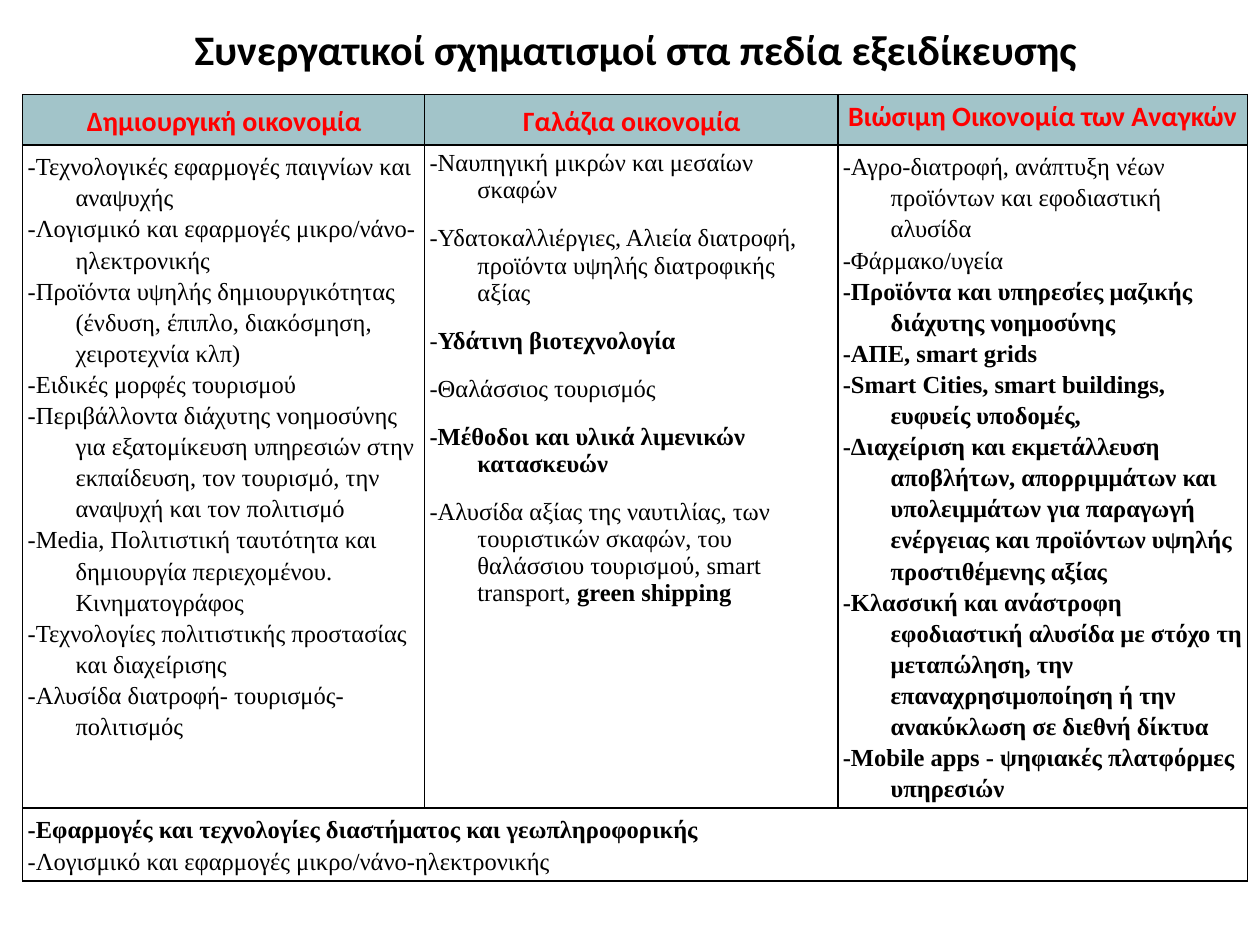
import pptx
import pptx.util
import pptx.dml.color
import pptx.enum.text
import pptx.oxml
import pptx.oxml.ns

Inches, Pt = pptx.util.Inches, pptx.util.Pt
CENTER = pptx.enum.text.PP_ALIGN.CENTER
LEFT = pptx.enum.text.PP_ALIGN.LEFT
MIDDLE = pptx.enum.text.MSO_ANCHOR.MIDDLE

# Content: text between ** marks is bold
TITLE = "**Συνεργατικοί σχηματισμοί στα πεδία εξειδίκευσης**"
HEADINGS = [
    "**Δημιουργική οικονομία**",
    "**Γαλάζια οικονομία**",
    "**Βιώσιμη Οικονομία των Αναγκών**",
]
FIELDS = [
    [
        "-Τεχνολογικές εφαρμογές παιγνίων και αναψυχής",
        "-Λογισμικό και εφαρμογές μικρο/νάνο-ηλεκτρονικής",
        "-Προϊόντα υψηλής δημιουργικότητας (ένδυση, έπιπλο, διακόσμηση, χειροτεχνία κλπ)",
        "-Ειδικές μορφές τουρισμού",
        "-Περιβάλλοντα διάχυτης νοημοσύνης για εξατομίκευση υπηρεσιών στην "
        "εκπαίδευση, τον τουρισμό, την αναψυχή και τον πολιτισμό",
        "-Μedia, Πολιτιστική ταυτότητα και δημιουργία περιεχομένου. Κινηματογράφος",
        "-Τεχνολογίες πολιτιστικής προστασίας και διαχείρισης",
        "-Αλυσίδα διατροφή- τουρισμός-πολιτισμός",
    ],
    [
        "-Ναυπηγική μικρών και μεσαίων σκαφών",
        "-Υδατοκαλλιέργιες, Αλιεία διατροφή, προϊόντα υψηλής διατροφικής αξίας",
        "-**Υδάτινη βιοτεχνολογία**",
        "-Θαλάσσιος τουρισμός",
        "**-Μέθοδοι και υλικά λιμενικών κατασκευών**",
        "-Αλυσίδα αξίας της ναυτιλίας, των τουριστικών σκαφών, του θαλάσσιου "
        "τουρισμού, smart transport, **green shipping**",
    ],
    [
        "-Αγρο-διατροφή, ανάπτυξη νέων προϊόντων και εφοδιαστική αλυσίδα",
        "-Φάρμακο/υγεία",
        "**-Προϊόντα και υπηρεσίες μαζικής διάχυτης νοημοσύνης**",
        "**-ΑΠΕ, smart grids**",
        "**-Smart Cities, smart buildings, ευφυείς υποδομές,**",
        "**-Διαχείριση και εκμετάλλευση αποβλήτων, απορριμμάτων και υπολειμμάτων "
        "για παραγωγή ενέργειας και προϊόντων υψηλής προστιθέμενης αξίας**",
        "**-Κλασσική και ανάστροφη εφοδιαστική αλυσίδα με στόχο τη μεταπώληση, την "
        "επαναχρησιμοποίηση ή την ανακύκλωση σε διεθνή δίκτυα**",
        "**-Mobile apps - ψηφιακές πλατφόρμες υπηρεσιών**",
    ],
]
SHARED = [
    "**-Eφαρμογές και τεχνολογίες διαστήματος και γεωπληροφορικής**",
    "-Λογισμικό και εφαρμογές μικρο/νάνο-ηλεκτρονικής",
]

# Formats
COLORS = {"black": "000000", "red": "FF0000", "teal": "A2C4C9", "white": "FFFFFF"}
COLUMNS = [3.19, 3.28, 3.25]
ROWS = [0.4, 5.26, 0.58]
TITLE_FONT = {"name": "Calibri", "size": Pt(24)}
HEADING_FONT = {"name": "Calibri", "size": Pt(16)}
BODY_FONT = {"name": "Times New Roman", "size": Pt(14)}
TITLE_LINES = {"alignment": CENTER, "line_spacing": 0.9}
HEADING_LINES = {"alignment": CENTER, "line_spacing": 1.15}
BODY_LINES = {"alignment": LEFT, "line_spacing": 1.15}
SPACED_LINES = {"alignment": LEFT, "space_before": Pt(6), "space_after": Pt(6)}


def color(name):
    return pptx.dml.color.RGBColor.from_string(COLORS[name])


def set_all(target, values):
    for name, value in values.items():
        setattr(target, name, value)


def write(frame, items, font, lines, ink="black", indent=None):
    for number, item in enumerate(items):
        paragraph = frame.add_paragraph() if number else frame.paragraphs[0]
        set_all(paragraph, lines)
        if indent:
            properties = paragraph._p.get_or_add_pPr()
            properties.set("marL", str(Inches(indent[0])))
            properties.set("indent", str(Inches(indent[1])))
        for part, text in enumerate(item.split("**")):
            if text:
                run = paragraph.add_run()
                run.text = text
                set_all(run.font, {**font, "bold": part % 2 == 1})
                run.font.color.rgb = color(ink)


def style_cell(cell, fill, vertical_margin=0.04):
    set_all(cell, {
        "margin_left": Inches(0.04), "margin_right": Inches(0.04),
        "margin_top": Inches(vertical_margin), "margin_bottom": Inches(vertical_margin),
    })
    cell.fill.solid()
    cell.fill.fore_color.rgb = color(fill)
    for position, side in enumerate("LRTB"):
        border = pptx.oxml.parse_xml(
            f'<a:ln{side} {pptx.oxml.ns.nsdecls("a")} w="{Pt(1)}"><a:solidFill>'
            f'<a:srgbClr val="{COLORS["black"]}"/></a:solidFill></a:ln{side}>')
        cell._tc.get_or_add_tcPr().insert(position, border)


def main():
    deck = pptx.Presentation()
    deck.slide_width, deck.slide_height = Inches(10), Inches(7.5)
    slide = deck.slides.add_slide(deck.slide_layouts[5])

    # Title
    title = slide.shapes.title
    set_all(title, {"left": Inches(0.19), "top": Inches(0.15),
                    "width": Inches(9.71), "height": Inches(0.53)})
    set_all(title.text_frame, {
        "word_wrap": True, "vertical_anchor": MIDDLE,
        "auto_size": pptx.enum.text.MSO_AUTO_SIZE.NONE,
        "margin_left": Inches(0.07), "margin_right": Inches(0.07),
        "margin_top": Inches(0.04), "margin_bottom": Inches(0.04),
    })
    write(title.text_frame, [TITLE], TITLE_FONT, TITLE_LINES)

    # Table grid
    table = slide.shapes.add_table(
        len(ROWS), len(COLUMNS), Inches(0.18), Inches(0.75),
        Inches(sum(COLUMNS)), Inches(sum(ROWS))).table
    set_all(table, {"first_row": False, "horz_banding": False})
    for column, width in zip(table.columns, COLUMNS):
        column.width = Inches(width)
    for row, height in zip(table.rows, ROWS):
        row.height = Inches(height)

    # Headings and fields
    hanging = (0.38, -0.38)
    for index, (heading, field) in enumerate(zip(HEADINGS, FIELDS)):
        last = index == len(HEADINGS) - 1
        top, body, bottom = (table.cell(row, index) for row in range(len(ROWS)))
        style_cell(top, "teal", 0 if last else 0.04)
        style_cell(body, "white")
        style_cell(bottom, "white")
        write(top.text_frame, [heading], HEADING_FONT, HEADING_LINES, "red",
              None if last else (0.26, -0.25))
        write(body.text_frame, field, BODY_FONT,
              SPACED_LINES if index == 1 else BODY_LINES, indent=hanging)

    # Shared row across all columns
    shared = table.cell(2, 0)
    shared.merge(table.cell(2, len(COLUMNS) - 1))
    write(shared.text_frame, SHARED, BODY_FONT, BODY_LINES, indent=hanging)

    deck.save("out.pptx")


if __name__ == "__main__":
    main()
